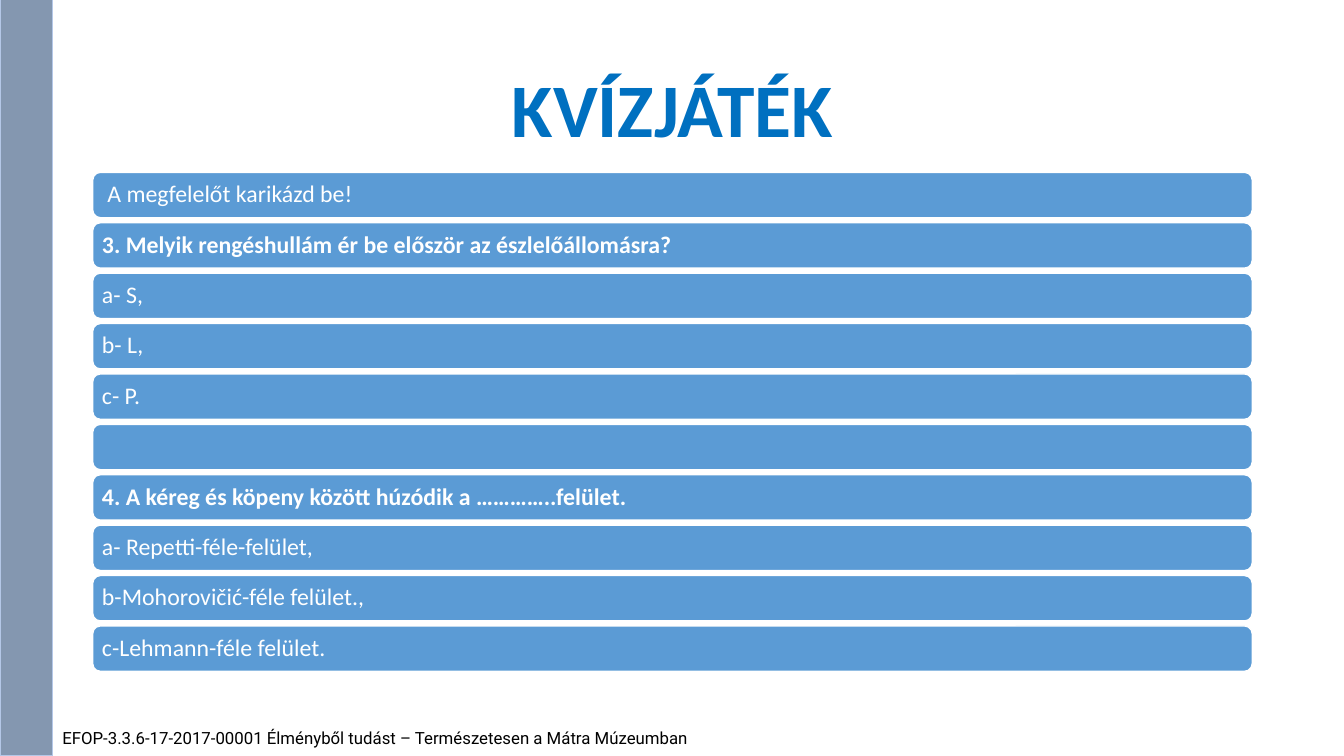
from dataclasses import dataclass

from pptx import Presentation
from pptx.dml.color import RGBColor
from pptx.enum.shapes import MSO_SHAPE
from pptx.enum.text import MSO_ANCHOR, PP_ALIGN
from pptx.util import Inches, Pt


@dataclass(frozen=True)
class Theme:
    """Colours, fonts and type sizes of the slide."""
    title: str = "0070C0"
    bar: str = "5B9BD5"
    white: str = "FFFFFF"
    black: str = "000000"
    band: str = "8497B0"
    band_line: str = "B4C7E7"
    body_font: str = "Calibri"
    footer_font: str = "Roboto"
    title_size: int = 54
    bar_size: int = 17
    footer_size: int = 12


THEME = Theme()
QUIZ_ROWS = [
    [(" ", True), ("A megfelelőt karikázd be!", False)],
    [("3. Melyik rengéshullám ér be először az észlelőállomásra?", True)],
    [("a- S,", False)],
    [("b- L,", False)],
    [("c- P.", False)],
    [],
    [("4. A kéreg és köpeny között húzódik a …………..felület.", True)],
    [("a- Repetti-féle-felület,", False)],
    [("b-Mohorovičić-féle felület.,", False)],
    [("c-Lehmann-féle felület.", False)],
]


def add_run(p, text, font, size, color, bold=False):
    """Append one formatted run to a paragraph."""
    r = p.add_run()
    r.text = text
    r.font.name = font
    r.font.size = Pt(size)
    r.font.bold = bold
    r.font.color.rgb = RGBColor.from_string(color)


def add_box(s, kind, box, fill, line, width):
    """Add a filled, outlined shape without shadow."""
    sp = s.shapes.add_shape(kind, *map(Inches, box))
    sp.shadow.inherit = False
    sp.fill.solid()
    sp.fill.fore_color.rgb = RGBColor.from_string(fill)
    sp.line.color.rgb = RGBColor.from_string(line)
    sp.line.width = Pt(width)
    return sp


def add_title(s, box, text):
    """Place and format the title placeholder."""
    sp = s.shapes.title
    sp.left, sp.top, sp.width, sp.height = map(Inches, box)
    tf = sp.text_frame
    tf.vertical_anchor = MSO_ANCHOR.MIDDLE
    p = tf.paragraphs[0]
    p.alignment = PP_ALIGN.CENTER
    p.line_spacing = 0.9
    add_run(p, text, THEME.body_font, THEME.title_size, THEME.title, True)


def add_quiz(s, box, rows, gap=0.05):
    """Stack one rounded bar per quiz row inside the box."""
    left, top, width, height = box
    pitch = (height + gap) / len(rows)
    for i, runs in enumerate(rows):
        bar = (left, top + i * pitch, width, pitch - gap)
        sp = add_box(s, MSO_SHAPE.ROUNDED_RECTANGLE, bar, THEME.bar, THEME.white, 1)
        tf = sp.text_frame
        tf.word_wrap = True
        tf.vertical_anchor = MSO_ANCHOR.MIDDLE
        tf.margin_left = tf.margin_right = Inches(0.07)
        tf.margin_top = tf.margin_bottom = Inches(0.07)
        p = tf.paragraphs[0]
        p.alignment = PP_ALIGN.LEFT
        p.line_spacing = 0.9
        for text, bold in runs:
            add_run(p, text, THEME.body_font, THEME.bar_size, THEME.white, bold)


def add_footer(s, box, text):
    """Write the project line at the foot of the slide."""
    tf = s.shapes.add_textbox(*map(Inches, box)).text_frame
    tf.word_wrap = True
    add_run(tf.paragraphs[0], text, THEME.footer_font, THEME.footer_size, THEME.black)


def main():
    """Build and save the quiz slide."""
    prs = Presentation()
    prs.slide_width, prs.slide_height = Inches(13.33), Inches(7.5)
    s = prs.slides.add_slide(prs.slide_layouts[5])
    add_title(s, (0.92, 0.4, 11.5, 1.45), "KVÍZJÁTÉK")
    add_quiz(s, (0.92, 1.71, 11.5, 4.95), QUIZ_ROWS)
    add_box(s, MSO_SHAPE.RECTANGLE, (0, 0, 0.52, 7.5), THEME.band, THEME.band_line, 0.75)
    add_footer(s, (0.52, 7.17, 8.3, 0.33),
               "EFOP-3.3.6-17-2017-00001 Élményből tudást – Természetesen a Mátra Múzeumban")
    prs.save("out.pptx")


if __name__ == "__main__":
    main()
